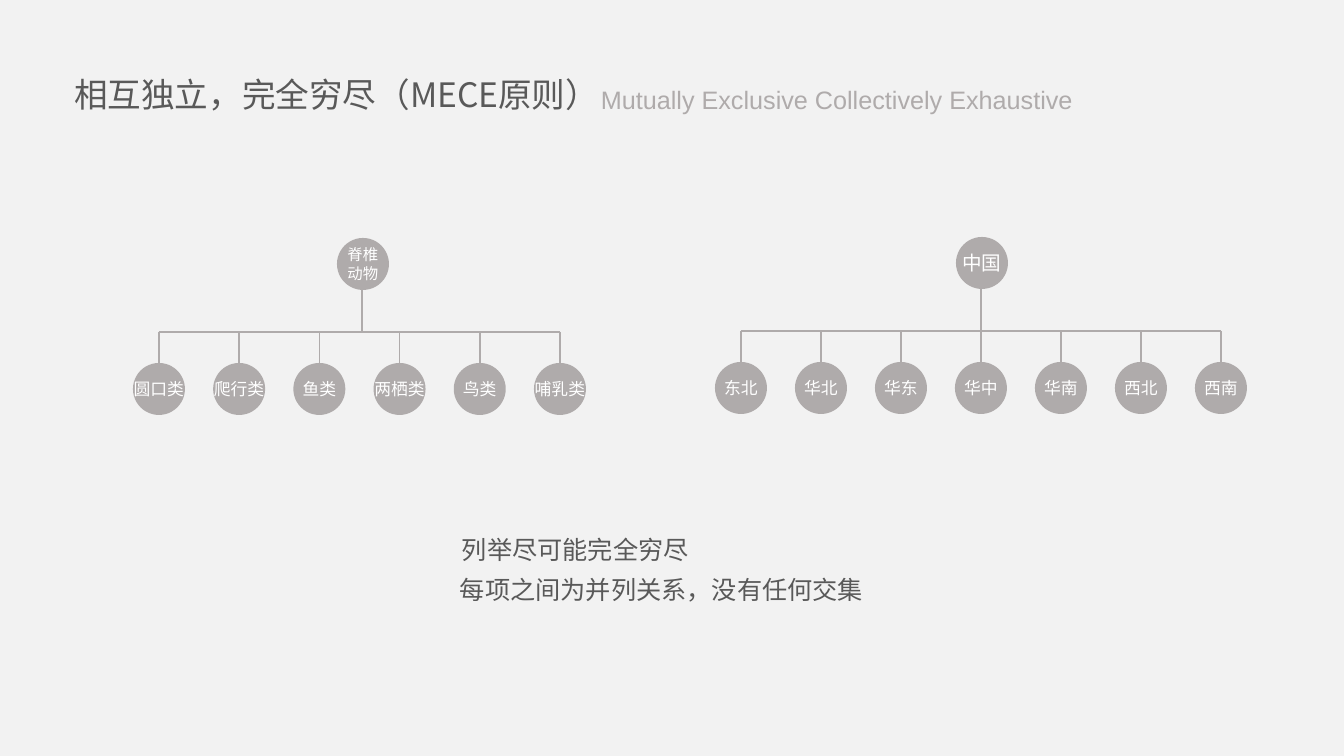
from pptx import Presentation
from pptx.dml.color import RGBColor
from pptx.enum.shapes import MSO_CONNECTOR, MSO_SHAPE
from pptx.enum.text import MSO_ANCHOR, MSO_AUTO_SIZE, PP_ALIGN
from pptx.oxml.ns import qn
from pptx.util import Pt
from lxml.etree import SubElement

PAPER = RGBColor(0xF2, 0xF2, 0xF2)
GREY = RGBColor(0xAF, 0xAB, 0xAB)
INK = RGBColor(0x59, 0x59, 0x59)
WHITE = RGBColor(0xFF, 0xFF, 0xFF)
CJK = "Noto Sans CJK SC"
DOT = 52


def px(n):
    """Turn px at 100.8 to the inch into EMU."""
    return round(n * 914400 / 100.8)


def write(sp, text, size, color, font=CJK, align=PP_ALIGN.LEFT, spacing=None):
    """Set the text of a shape and format its paragraphs and runs."""
    tf = sp.text_frame
    tf.text = text
    for p in tf.paragraphs:
        p.alignment = align
        p.line_spacing = spacing
        for r in p.runs:
            r.font.size = Pt(size)
            r.font.color.rgb = color
            r.font.name = font
            SubElement(r.font._element, qn("a:ea")).set("typeface", font)
    return tf


def add_text(s, box, text, size, color, font=CJK, spacing=None):
    """Add a one-line text box in the given box."""
    sp = s.shapes.add_textbox(*map(px, box))
    tf = write(sp, text, size, color, font, spacing=spacing)
    tf.word_wrap = False


def add_line(s, x1, y1, x2, y2):
    """Add a straight grey line without a shadow."""
    c = s.shapes.add_connector(MSO_CONNECTOR.STRAIGHT, *map(px, (x1, y1, x2, y2)))
    c.line.color.rgb = GREY
    c.line.width = Pt(1.25)
    SubElement(c._element.spPr, qn("a:effectLst"))


def add_node(s, x, top, text, size):
    """Add a labelled circle centred on x."""
    sp = s.shapes.add_shape(MSO_SHAPE.OVAL, px(x - DOT / 2), px(top), px(DOT), px(DOT))
    sp.shadow.inherit = False
    sp.fill.solid()
    sp.fill.fore_color.rgb = GREY
    sp.line.fill.background()
    tf = write(sp, text, size, WHITE, align=PP_ALIGN.CENTER)
    tf.word_wrap = False
    tf.vertical_anchor = MSO_ANCHOR.MIDDLE
    tf.margin_left = tf.margin_right = tf.margin_top = tf.margin_bottom = 0


def add_tree(s, box, root_x, root, root_size, leaves):
    """Draw a root above evenly spaced leaves inside the box."""
    left, top, width, height = box
    first, last = left + DOT / 2, left + width - DOT / 2
    bar, leaf_top = top + 94, top + height - DOT
    pitch = (last - first) / (len(leaves) - 1)
    add_line(s, first, bar, last, bar)
    add_line(s, root_x, top + DOT / 2, root_x, bar)
    add_node(s, root_x + 1, top, root, root_size)
    for i, leaf in enumerate(leaves):
        x = first + i * pitch
        add_line(s, x, bar, x, leaf_top + DOT / 2)
        add_node(s, x, leaf_top, leaf, 12)


def add_heading(s, box):
    """Place the title and its English subtitle in the box."""
    left, top, width, height = box
    title = s.shapes.title
    title.left, title.top, title.width, title.height = map(px, (left, top, 558, height))
    tf = write(title, "相互独立，完全穷尽（MECE原则）", 24, INK)
    tf.word_wrap = True
    tf.auto_size = MSO_AUTO_SIZE.NONE
    tf.vertical_anchor = MSO_ANCHOR.TOP
    add_text(s, (left + width - 497, top + 10, 497, 40),
             "Mutually Exclusive Collectively Exhaustive", 18, GREY, "Arial")


def add_rules(s, box):
    """Place the two rules, one line each, in the box."""
    left, top, width, height = box
    add_text(s, (left + 2, top, 249, 56), "列举尽可能完全穷尽", 18, INK, spacing=1.5)
    add_text(s, (left, top + height - 56, width, 56),
             "每项之间为并列关系，没有任何交集", 18, INK, spacing=1.5)


def main():
    """Build the slide and save it."""
    prs = Presentation()
    prs.slide_width, prs.slide_height = px(1344), px(756)
    s = prs.slides.add_slide(prs.slide_layouts[5])
    s.background.fill.solid()
    s.background.fill.fore_color.rgb = PAPER
    add_heading(s, (64, 69, 1024, 50))
    add_tree(s, (133, 238, 453, 177), 362, "脊椎\n动物", 11,
             ["圆口类", "爬行类", "鱼类", "两栖类", "鸟类", "哺乳类"])
    add_tree(s, (715, 237, 532, 177), 981, "中国", 14,
             ["东北", "华北", "华东", "华中", "华南", "西北", "西南"])
    add_rules(s, (450, 514, 427, 96))
    prs.save("out.pptx")


if __name__ == "__main__":
    main()
